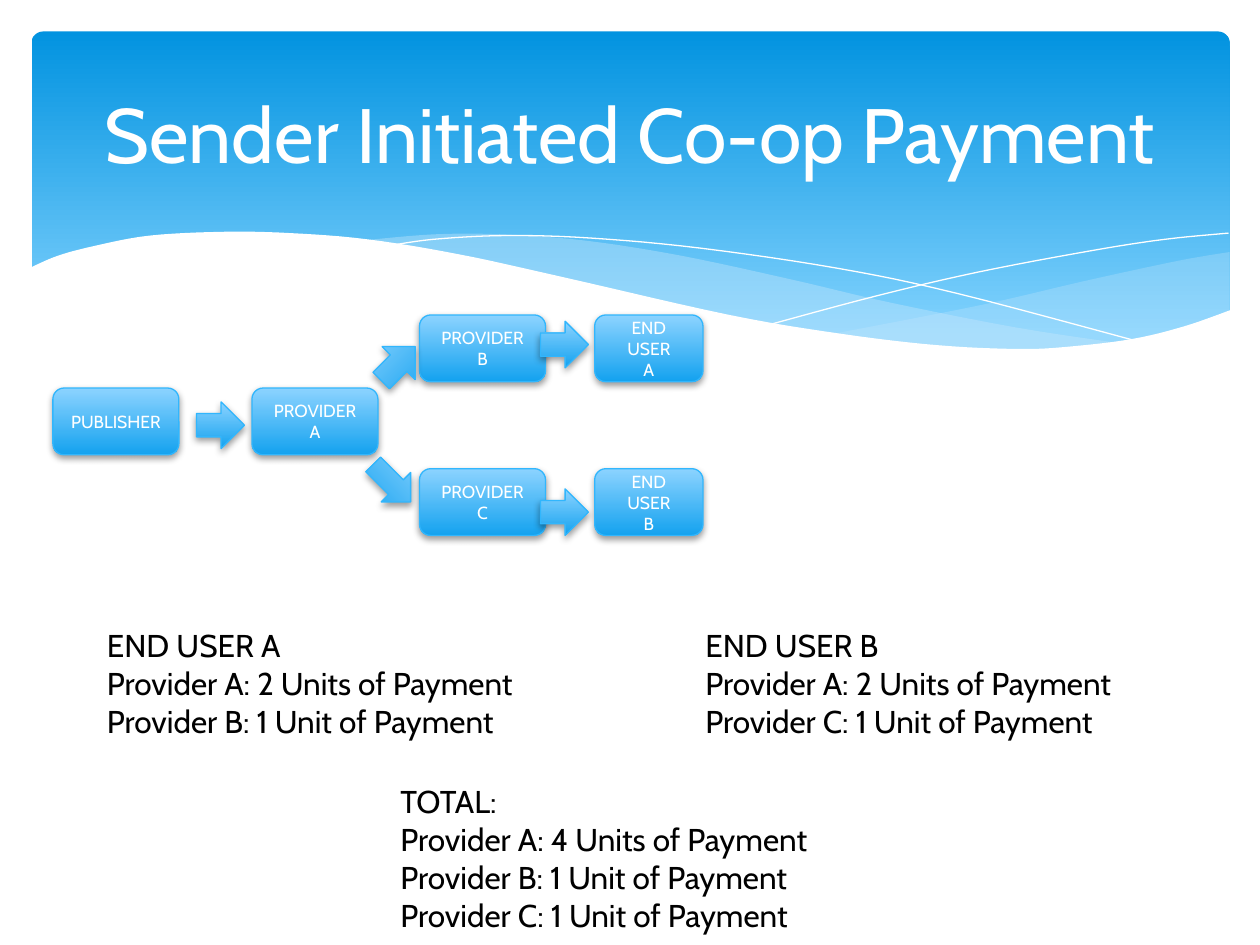
"""Build the slide on sender initiated co-op payment."""
from lxml import etree
from pptx import Presentation
from pptx import util as u
from pptx.dml.color import RGBColor
from pptx.enum import shapes, text
from pptx.oxml import ns

WHITE = RGBColor(0xFF, 0xFF, 0xFF)
BLACK = RGBColor(0, 0, 0)
BAND_TOP = RGBColor(0x02, 0x93, 0xE0)
BAND_BOTTOM = RGBColor(0x83, 0xD3, 0xFE)
WAVE = RGBColor(0xC6, 0xE7, 0xFC)
NODE_TOP = RGBColor(0x8C, 0xD3, 0xFF)
NODE_BOTTOM = RGBColor(0x14, 0xA2, 0xEF)
OUTLINE = RGBColor(0x31, 0xB6, 0xFD)

HORIZON = [(9.77, 2.46), (9.4, 2.59), (8.99, 2.69), (8.5, 2.75), (8.09, 2.77),
           (7.44, 2.74), (6.68, 2.65), (5.79, 2.5), (4.47, 2.2), (3.65, 2.02),
           (2.92, 1.9), (2.3, 1.85), (1.77, 1.84), (1.19, 1.87), (0.76, 1.95),
           (0.46, 2.03), (0.23, 2.13)]
RIGHT_TOP = [(9.76, 2), (9.35, 2.07), (8.61, 2.23), (7.79, 2.42), (6.61, 2.65)]
RIGHT_BOTTOM = [(6.61, 2.65), (7.19, 2.72), (7.69, 2.77), (8.14, 2.78), (8.54, 2.76),
                (8.97, 2.7), (9.35, 2.62), (9.76, 2.47)]
MIDDLE_TOP = [(8.93, 2.73), (8.07, 2.6), (7.06, 2.4), (6.29, 2.22), (5.41, 2.03),
              (4.65, 1.91), (3.99, 1.86), (3.44, 1.86), (2.86, 1.91)]
MIDDLE_BOTTOM = [(2.86, 1.91), (3.62, 2.03), (4.49, 2.22), (5.66, 2.48), (6.5, 2.64),
                 (7.22, 2.74), (7.85, 2.78), (8.38, 2.78), (8.93, 2.73)]
FALLING_LINE = [(3.09, 1.95), (3.44, 1.9), (4.01, 1.87), (4.69, 1.89), (5.56, 1.97),
                (6.65, 2.13), (7.6, 2.33), (9.07, 2.72)]
RISING_LINE = [(6.13, 2.57), (6.95, 2.35), (7.76, 2.16), (8.66, 1.99), (9.24, 1.9), (9.75, 1.85)]


def smooth(knots, steps=6):
    """Return points on a Catmull-Rom curve through the knots."""
    ends = [knots[0], *knots, knots[-1]]
    points = [knots[0]]
    for a, b, c, d in zip(ends, ends[1:], ends[2:], ends[3:]):
        for step in range(1, steps + 1):
            t = step / steps
            points.append(tuple(
                (2 * q + (r - p) * t + (2 * p - 5 * q + 4 * r - s) * t ** 2
                 + (3 * q - p - 3 * r + s) * t ** 3) / 2
                for p, q, r, s in zip(a, b, c, d)))
    return points


def write(frame, lines, size=10, color=WHITE, align=text.PP_ALIGN.CENTER,
          anchor=text.MSO_ANCHOR.MIDDLE, wrap=True, font="Cabin"):
    """Put each line of text in its own paragraph of the frame."""
    frame.word_wrap = wrap
    frame.vertical_anchor = anchor
    for number, line in enumerate(lines.split("\n")):
        para = frame.add_paragraph() if number else frame.paragraphs[0]
        para.alignment = align
        span = para.add_run()
        span.text = line
        span.font.size = u.Pt(size)
        span.font.name = font
        span.font.color.rgb = color


class Painter:
    """Draw styled elements on the current slide."""

    def __init__(self, slide):
        self.slide = slide

    def shape(self, kind, left, top, width, height, colors, end=1):
        """Add a preset shape with a vertical gradient and no shadow."""
        box = self.slide.shapes.add_shape(
            kind, *(u.Inches(value) for value in (left, top, width, height)))
        box.shadow.inherit = False
        box.fill.gradient()
        box.fill.gradient_angle = 270
        for stop, color, position in zip(box.fill.gradient_stops, colors, (0, end)):
            stop.color.rgb = color
            stop.position = position
        return box

    def band(self, left, top, width, height):
        """Add the coloured header band."""
        box = self.shape(shapes.MSO_SHAPE.ROUNDED_RECTANGLE, left, top, width, height,
                         (BAND_TOP, BAND_BOTTOM), end=0.9)
        box.adjustments[0] = 0.034
        box.line.fill.background()

    def raised(self, kind, left, top, width, height):
        """Add an outlined diagram shape with a soft shadow."""
        box = self.shape(kind, left, top, width, height, (NODE_TOP, NODE_BOTTOM))
        box.line.color.rgb = OUTLINE
        box.line.width = u.Pt(0.75)
        effects = box._element.spPr.find(ns.qn("a:effectLst"))
        shadow = etree.SubElement(effects, ns.qn("a:outerShdw"), blurRad=str(u.Pt(4)),
                                  dist=str(u.Pt(2)), dir="5400000", rotWithShape="0")
        color = etree.SubElement(shadow, ns.qn("a:srgbClr"), val=str(BLACK))
        etree.SubElement(color, ns.qn("a:alpha"), val="38000")
        return box

    def node(self, label, left, top, width=1):
        """Add a labelled step of the diagram."""
        box = self.raised(shapes.MSO_SHAPE.ROUNDED_RECTANGLE, left, top, width, 0.53)
        write(box.text_frame, label)

    def arrow(self, left, top, width=0.38, height=0.37, rotation=0):
        """Add a block arrow."""
        box = self.raised(shapes.MSO_SHAPE.RIGHT_ARROW, left, top, width, height)
        box.rotation = rotation

    def curve(self, points, closed):
        """Add an outline through the points."""
        start, *rest = [(u.Inches(x), u.Inches(y)) for x, y in points]
        builder = self.slide.shapes.build_freeform(*start)
        builder.add_line_segments(rest, close=closed)
        outline = builder.convert_to_shape()
        outline.shadow.inherit = False
        return outline

    def area(self, points, color, opacity=100):
        """Add a filled wave."""
        wave = self.curve(points, True)
        wave.fill.solid()
        wave.fill.fore_color.rgb = color
        wave.line.fill.background()
        if opacity < 100:
            tone = wave._element.spPr.find(f".//{ns.qn('a:srgbClr')}")
            etree.SubElement(tone, ns.qn("a:alpha"), val=str(opacity * 1000))

    def hairline(self, knots):
        """Add a thin white curve."""
        line = self.curve(smooth(knots), False)
        line.fill.background()
        line.line.color.rgb = WHITE
        line.line.width = u.Pt(0)

    def text(self, lines, left, top, width, height, **style):
        """Add a text box."""
        box = self.slide.shapes.add_textbox(
            *(u.Inches(value) for value in (left, top, width, height)))
        write(box.text_frame, lines, **style)
        return box

    def summary(self, lines, left, top, width, height):
        """Add a left-aligned list of payments."""
        box = self.text(lines, left, top, width, height, size=18, color=BLACK,
                        align=text.PP_ALIGN.LEFT, anchor=text.MSO_ANCHOR.TOP, wrap=False)
        box.text_frame.auto_size = text.MSO_AUTO_SIZE.SHAPE_TO_FIT_TEXT


def main():
    """Build and save the deck."""
    deck = Presentation()
    deck.slide_width, deck.slide_height = u.Inches(10), u.Inches(7.5)
    page = Painter(deck.slides.add_slide(deck.slide_layouts[6]))

    page.band(0.25, 0.25, 9.51, 2.7)
    page.area(smooth(RIGHT_TOP) + smooth(RIGHT_BOTTOM), WAVE, 29)
    page.area(smooth(MIDDLE_TOP) + smooth(MIDDLE_BOTTOM), WAVE, 40)
    page.hairline(FALLING_LINE)
    page.hairline(RISING_LINE)
    page.area(smooth(HORIZON) + [(0.23, 3.29), (9.77, 3.29)], WHITE)
    page.text("Sender Initiated Co-op Payment", 0.5, 0.37, 9, 1.37, size=44)

    page.node("PUBLISHER", 0.42, 3.08)
    page.node("PROVIDER A", 2, 3.08)
    page.arrow(1.56, 3.19)
    for provider, user, top, arrow_top in (("B", "A", 2.5, 2.55), ("C", "B", 3.72, 3.88)):
        page.node(f"PROVIDER\n{provider}", 3.33, top)
        page.node(f"END USER\n{user}", 4.72, top, width=0.86)
        page.arrow(4.29, arrow_top)
        page.summary(f"END USER {user}\nProvider A: 2 Units of Payment\n"
                     f"Provider {provider}: 1 Unit of Payment",
                     0.75 if user == "A" else 5.5, 4.92, 3.45, 1.01)
    page.arrow(2.97, 2.7, rotation=315)
    page.arrow(2.9, 3.67, 0.42, 0.33, rotation=45)
    page.summary("TOTAL:\nProvider A: 4 Units of Payment\nProvider B: 1 Unit of Payment\n"
                 "Provider C: 1 Unit of Payment", 3.08, 6.16, 3.46, 1.31)

    deck.save("out.pptx")


if __name__ == "__main__":
    main()
